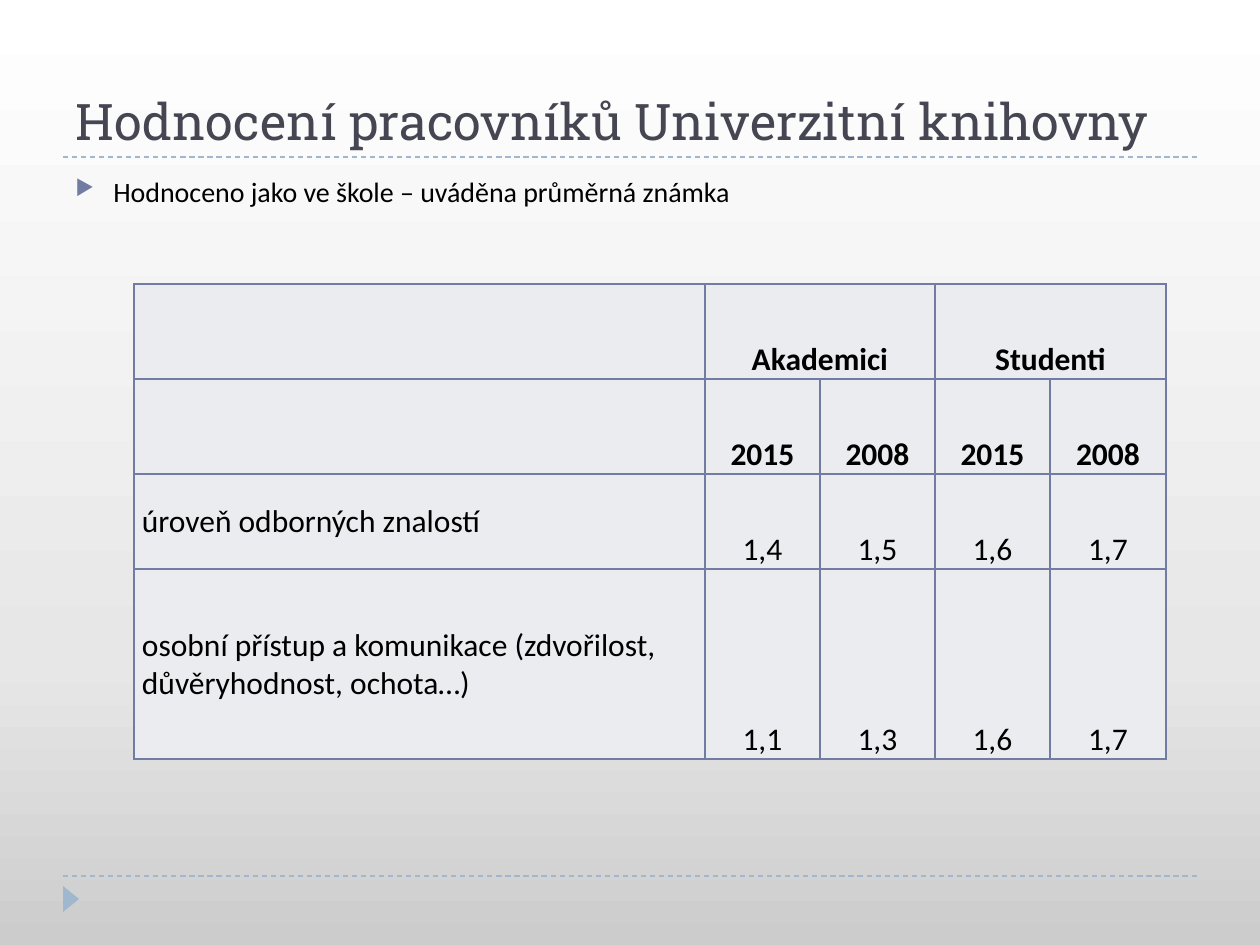
from copy import deepcopy

from lxml.etree import SubElement
from pptx import Presentation
from pptx.dml.color import RGBColor
from pptx.enum.dml import MSO_LINE_DASH_STYLE as Dash
from pptx.enum.shapes import MSO_CONNECTOR as Connector, MSO_SHAPE as Shape
from pptx.enum.text import MSO_ANCHOR as Anchor, PP_ALIGN as Align
from pptx.oxml import parse_xml
from pptx.oxml.ns import nsdecls, qn
from pptx.util import Emu, Pt

COLORS = {
    "title": "464653",
    "text": "000000",
    "accent": "727CA3",
    "rule": "9FB8CD",
    "cell": "EBECF0",
}
BACKDROP = [(0, "CCCCCC"), (0.3, "E7E7E7"), (1, "FFFFFF")]
HEADING_FONT, BODY_FONT = "Roboto Slab", "Calibri"
COLUMNS = [571, 115, 115, 115, 116]
ROWS = [95, 95, 95, 190]
GROUPS = ["Akademici", "Studenti"]
YEARS = ["2015", "2008"]
RATINGS = [
    (["úroveň odborných znalostí"], ["1,4", "1,5", "1,6", "1,7"]),
    (["osobní přístup a komunikace (zdvořilost,", "důvěryhodnost, ochota…)"],
     ["1,1", "1,3", "1,6", "1,7"]),
]


def px(length):
    return Emu(round(length * 914400 / 126))


def color(name):
    return RGBColor.from_string(COLORS[name])


def add_span(para, text, size, font=BODY_FONT, ink="text", bold=False):
    span = para.add_run()
    span.text = text
    span.font.size = Pt(size)
    span.font.name = font
    span.font.bold = bold
    span.font.color.rgb = color(ink)


def add_text_box(page, box, anchor):
    frame = page.shapes.add_textbox(*map(px, box)).text_frame
    frame.word_wrap = True
    frame.vertical_anchor = anchor
    return frame.paragraphs[0]


def paint_background(page):
    fill = page.background.fill
    fill.gradient()
    fill.gradient_angle = 90
    stop_list = page.element.xpath(".//a:gsLst")[0]
    stop_list.append(deepcopy(stop_list[-1]))
    for stop, (position, shade) in zip(fill.gradient_stops, BACKDROP):
        stop.position = position
        stop.color.rgb = RGBColor.from_string(shade)


def add_rule(page, left, top, width):
    rule = page.shapes.add_connector(
        Connector.STRAIGHT, px(left), px(top), px(left + width), px(top))
    rule.line.color.rgb = color("rule")
    rule.line.width = Pt(0.75)
    rule.line.dash_style = Dash.DASH
    SubElement(rule.element.spPr, qn("a:effectLst"))


def add_footer(page, left, top, width):
    add_rule(page, left, top, width)
    marker = page.shapes.add_shape(
        Shape.ISOSCELES_TRIANGLE, px(left - 5), px(top + 15), px(26), px(16))
    marker.rotation = 90
    marker.shadow.inherit = False
    marker.fill.solid()
    marker.fill.fore_color.rgb = color("rule")
    marker.line.fill.background()


def add_heading(page, left, top, width, height):
    add_rule(page, left, top + height, width)
    para = add_text_box(page, (left, top, width, height), Anchor.BOTTOM)
    add_span(para, "Hodnocení pracovníků Univerzitní knihovny",
             28.8, HEADING_FONT, "title")


def add_body(page, left, top, width, height):
    para = add_text_box(page, (left, top, width, height), Anchor.TOP)
    para.space_before = Pt(6)
    props = para._p.get_or_add_pPr()
    props.set("marL", str(px(38)))
    props.set("indent", str(px(-38)))
    bullet_color = SubElement(props, qn("a:buClr"))
    SubElement(bullet_color, qn("a:srgbClr"), val=COLORS["accent"])
    SubElement(props, qn("a:buSzPct"), val="76000")
    SubElement(props, qn("a:buChar"), char="▶")
    add_span(para, "Hodnoceno jako ve škole – uváděna průměrná známka", 16)


def style_cell(cell):
    cell.fill.solid()
    cell.fill.fore_color.rgb = color("cell")
    cell.margin_left = cell.margin_right = cell.margin_top = px(1)
    cell.margin_bottom = 0
    props = cell._tc.get_or_add_tcPr()
    for index, side in enumerate("LRTB"):
        props.insert(index, parse_xml(
            f'<a:ln{side} {nsdecls("a")} w="{Pt(1)}"><a:solidFill>'
            f'<a:srgbClr val="{COLORS["accent"]}"/></a:solidFill></a:ln{side}>'))


def write_value(cell, text, bold=False):
    cell.vertical_anchor = Anchor.BOTTOM
    para = cell.text_frame.paragraphs[0]
    para.alignment = Align.CENTER
    add_span(para, text, 18, bold=bold)


def write_label(cell, lines):
    cell.vertical_anchor = Anchor.MIDDLE
    cell.margin_left = px(8)
    frame = cell.text_frame
    for index, line in enumerate(lines):
        para = frame.add_paragraph() if index else frame.paragraphs[0]
        add_span(para, line, 18)


def add_ratings(page, left, top):
    table = page.shapes.add_table(
        len(ROWS), len(COLUMNS), px(left), px(top),
        px(sum(COLUMNS)), px(sum(ROWS))).table
    table.first_row = table.horz_banding = False
    for column, width in zip(table.columns, COLUMNS):
        column.width = px(width)
    for row, height in zip(table.rows, ROWS):
        row.height = px(height)
        for cell in row.cells:
            style_cell(cell)
    for index, group in enumerate(GROUPS):
        first = 1 + index * len(YEARS)
        header = table.cell(0, first)
        header.merge(table.cell(0, first + len(YEARS) - 1))
        write_value(header, group, bold=True)
        for offset, year in enumerate(YEARS):
            write_value(table.cell(1, first + offset), year, bold=True)
    for row, (label, values) in enumerate(RATINGS, start=2):
        write_label(table.cell(row, 0), label)
        for column, value in enumerate(values, start=1):
            write_value(table.cell(row, column), value)


def main():
    deck = Presentation()
    deck.slide_width, deck.slide_height = px(1260), px(945)
    page = deck.slides.add_slide(deck.slide_layouts[6])
    paint_background(page)
    add_footer(page, 63, 876, 1134)
    add_heading(page, 63, 21, 1134, 136)
    add_body(page, 63, 168, 1134, 680)
    add_ratings(page, 134, 284)
    deck.save("out.pptx")


if __name__ == "__main__":
    main()
